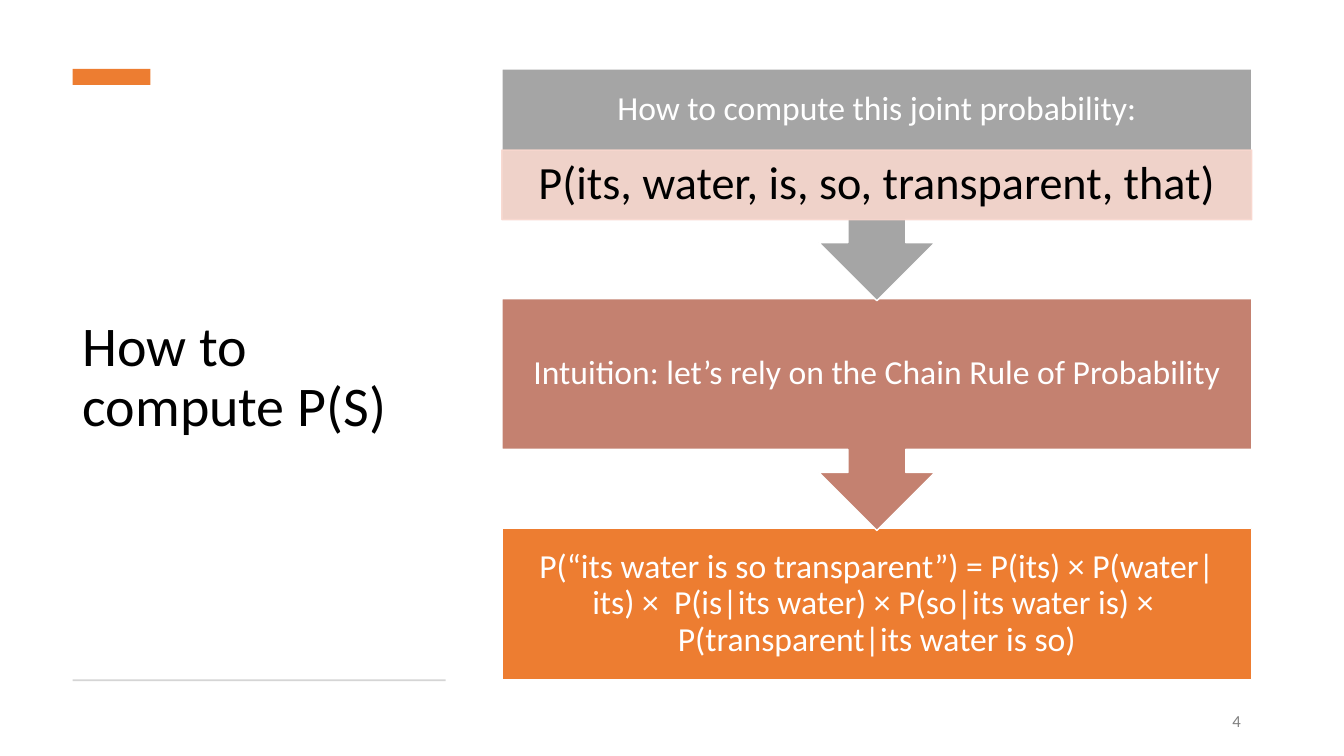
from lxml.etree import SubElement
from pptx import Presentation
from pptx.dml.color import RGBColor
from pptx.enum.shapes import MSO_SHAPE
from pptx.enum.text import MSO_ANCHOR, PP_ALIGN
from pptx.oxml.ns import qn
from pptx.util import Pt

FONT = "Calibri"
ORANGE, ROSE, GREY, PINK = "ED7D31", "C48170", "A5A5A5", "F8D7CE"
WHITE, BLACK = "FFFFFF", "000000"


def rgb(value):
    return RGBColor.from_string(value)


def write(sp, text, size, color, align=PP_ALIGN.CENTER, insets=(7.2, 3.6, 7.2, 3.6), spacing=0.9):
    tf = sp.text_frame
    tf.word_wrap = True
    tf.vertical_anchor = MSO_ANCHOR.MIDDLE
    tf.margin_left, tf.margin_top, tf.margin_right, tf.margin_bottom = map(Pt, insets)
    p = tf.paragraphs[0]
    p.alignment = align
    p.line_spacing = spacing
    r = p.add_run()
    r.text = text
    r.font.size = Pt(size)
    r.font.name = FONT
    r.font.color.rgb = rgb(color)


def add_block(slide, kind, box, fill, line=None):
    sp = slide.shapes.add_shape(kind, *map(Pt, box))
    sp.shadow.inherit = False
    sp.fill.solid()
    sp.fill.fore_color.rgb = rgb(fill)
    if line:
        sp.line.color.rgb = rgb(line)
        sp.line.width = Pt(1)
    else:
        sp.line.fill.background()
    return sp


def set_opacity(sp, percent):
    for color in sp._element.spPr.iter(qn("a:srgbClr")):
        SubElement(color, qn("a:alpha")).set("val", str(percent * 1000))


def add_title_panel(slide, box, title):
    x, y, w, h = box
    add_block(slide, MSO_SHAPE.RECTANGLE, (x, y, 55.5, 11.5), ORANGE)
    sp = slide.shapes.add_textbox(*map(Pt, (x, y + 26.3, w, 389.5)))
    write(sp, title, 40, BLACK, PP_ALIGN.LEFT)
    add_block(slide, MSO_SHAPE.RECTANGLE, (x, y + h - 1.4, w, 1.4), "D5D5D5")


def add_steps(slide, box, question, formula, intuition, expansion):
    x, y, w, h = box
    step_h = 107.7
    pitch = (h - step_h) / 2
    callout_h = 165.6
    head_h, formula_h = 58, 49.7
    pad = 13.7
    steps = [
        (MSO_SHAPE.RECTANGLE, expansion, ORANGE, step_h, pad),
        (MSO_SHAPE.DOWN_ARROW_CALLOUT, intuition, ROSE, callout_h, pad),
        (MSO_SHAPE.DOWN_ARROW_CALLOUT, question, GREY, callout_h, pad + formula_h),
    ]
    for i, (kind, text, fill, height, bottom) in enumerate(steps):
        sp = add_block(slide, kind, (x, y + (2 - i) * pitch, w, height), fill, WHITE)
        write(sp, text, 24, WHITE, insets=(pad, pad, pad, bottom))
    sp = add_block(slide, MSO_SHAPE.RECTANGLE, (x, y + head_h, w, formula_h), PINK, PINK)
    set_opacity(sp, 90)
    write(sp, formula, 33, BLACK, insets=(18.7, 3.6, 18.7, 3.6))


def add_page_number(slide, box, number):
    sp = slide.shapes.add_textbox(*map(Pt, box))
    write(sp, number, 12, "808080", PP_ALIGN.RIGHT, spacing=1.0)


def main():
    prs = Presentation()
    prs.slide_width, prs.slide_height = Pt(960), Pt(540)
    slide = prs.slides.add_slide(prs.slide_layouts[6])
    add_title_panel(slide, (52, 49.2, 266.4, 437.4), "How to compute P(S)")
    add_page_number(slide, (697.7, 500.4, 195.8, 28.8), "4")
    add_steps(
        slide,
        (358.5, 49.2, 535.7, 436),
        "How to compute this joint probability:",
        "P(its, water, is, so, transparent, that)",
        "Intuition: let’s rely on the Chain Rule of Probability",
        "P(“its water is so transparent”) = P(its) × P(water|its) ×  P(is|its water)"
        " × P(so|its water is) ×  P(transparent|its water is so)",
    )
    prs.save("out.pptx")


if __name__ == "__main__":
    main()
